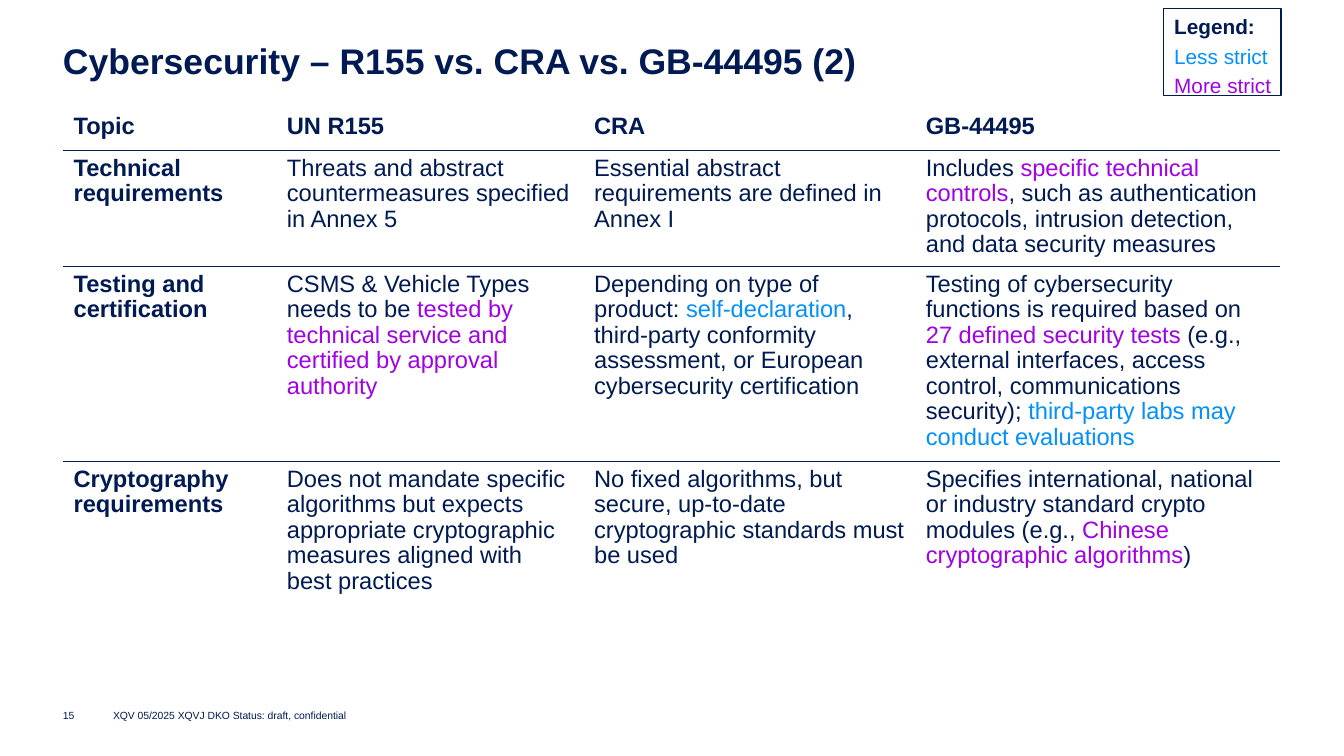
from lxml.etree import SubElement
from pptx import Presentation
from pptx.dml.color import RGBColor
from pptx.enum.shapes import MSO_SHAPE as Shape
from pptx.enum.text import MSO_ANCHOR as Anchor, PP_ALIGN as Align
from pptx.oxml.ns import qn
from pptx.util import Pt

EMU_PER_PX = 9144
FONT = "Arial"
NAVY = RGBColor(0x00, 0x1A, 0x54)
BLUE = RGBColor(0x00, 0x91, 0xFF)
PURPLE = RGBColor(0xA2, 0x00, 0xE6)
WHITE = RGBColor(0xFF, 0xFF, 0xFF)

COLUMN_WIDTHS = [200, 288, 311, 342]
ROW_HEIGHTS = [39, 109, 183, 133]

# A cell is a list of (text, colour) runs.
ROWS = [
    [[("Topic", NAVY)], [("UN R155", NAVY)], [("CRA", NAVY)], [("GB-44495", NAVY)]],
    [
        [("Technical requirements", NAVY)],
        [("Threats and abstract countermeasures specified in Annex 5", NAVY)],
        [("Essential abstract requirements are defined in Annex I", NAVY)],
        [("Includes ", NAVY), ("specific technical controls", PURPLE),
         (", such as authentication protocols, intrusion detection, "
          "and data security measures", NAVY)],
    ],
    [
        [("Testing and certification", NAVY)],
        [("CSMS & Vehicle Types needs to be ", NAVY),
         ("tested by technical service and certified by approval authority", PURPLE)],
        [("Depending on type of product: ", NAVY), ("self-declaration", BLUE),
         (", third-party conformity assessment, or European "
          "cybersecurity certification", NAVY)],
        [("Testing of cybersecurity functions is required based on ", NAVY),
         ("27 defined security tests ", PURPLE),
         ("(e.g., external interfaces, access control, "
          "communications security); ", NAVY),
         ("third-party labs may conduct evaluations", BLUE)],
    ],
    [
        [("Cryptography requirements", NAVY)],
        [("Does not mandate specific algorithms but expects appropriate "
          "cryptographic measures aligned with best practices", NAVY)],
        [("No fixed algorithms, but secure, up-to-date cryptographic "
          "standards must be used", NAVY)],
        [("Specifies international, national or industry standard crypto "
          "modules (e.g., ", NAVY),
         ("Chinese cryptographic algorithms", PURPLE), (")", NAVY)],
    ],
]


def px(length):
    return round(length * EMU_PER_PX)


def add_run(paragraph, text, size, color=NAVY, bold=False):
    run = paragraph.add_run()
    run.text = text
    font = run.font
    font.name, font.size, font.bold = FONT, Pt(size), bold
    font.color.rgb = color


def set_margins(frame, left=0):
    frame.margin_left = px(left)
    frame.margin_top = frame.margin_right = frame.margin_bottom = 0


def set_title(slide, text):
    title = slide.shapes.title
    title.left, title.top, title.width, title.height = map(px, (59, 39, 1142, 40))
    frame = title.text_frame
    set_margins(frame)
    frame.vertical_anchor = Anchor.TOP
    paragraph = frame.paragraphs[0]
    paragraph.alignment = Align.LEFT
    paragraph.line_spacing = 0.97
    add_run(paragraph, text, 24, bold=True)


def set_borders(cell, ruled_sides):
    """Rule the named sides (T, B) and leave the others without a line."""
    properties = cell._tc.get_or_add_tcPr()
    for side in "LRTB":
        line = SubElement(properties, qn(f"a:ln{side}"), w=str(Pt(0.5)))
        if side in ruled_sides:
            fill = SubElement(line, qn("a:solidFill"))
            SubElement(fill, qn("a:srgbClr"), val=str(NAVY))
        else:
            SubElement(line, qn("a:noFill"))


def fill_cell(cell, runs, bold, ruled_sides):
    set_borders(cell, ruled_sides)
    cell.fill.solid()
    cell.fill.fore_color.rgb = WHITE
    paragraph = cell.text_frame.paragraphs[0]
    paragraph.line_spacing = 0.97
    for text, color in runs:
        add_run(paragraph, text, 16, color, bold)


def add_comparison_table(slide):
    frame = slide.shapes.add_table(
        len(ROWS), len(COLUMN_WIDTHS), px(59), px(102),
        px(sum(COLUMN_WIDTHS)), px(sum(ROW_HEIGHTS)))
    table = frame.table
    table.first_row = table.horz_banding = False
    for column, width in zip(table.columns, COLUMN_WIDTHS):
        column.width = px(width)
    for row, height in zip(table.rows, ROW_HEIGHTS):
        row.height = px(height)
    last_row = len(ROWS) - 1
    for r, row in enumerate(ROWS):
        ruled_sides = ("T" if r > 0 else "") + ("B" if r < last_row else "")
        for c, runs in enumerate(row):
            fill_cell(table.cell(r, c), runs, r == 0 or c == 0, ruled_sides)


def add_legend(slide, entries):
    box = slide.shapes.add_shape(
        Shape.RECTANGLE, px(1091), px(8), px(110), px(82))
    box.shadow.inherit = False
    box.fill.background()
    box.line.color.rgb = NAVY
    box.line.width = Pt(0.75)
    frame = box.text_frame
    set_margins(frame, left=10)
    frame.vertical_anchor = Anchor.TOP
    for i, (text, color, bold) in enumerate(entries):
        paragraph = frame.add_paragraph() if i else frame.paragraphs[0]
        paragraph.alignment = Align.LEFT
        paragraph.line_spacing = 1.2
        add_run(paragraph, text, 14, color, bold)


def add_footer_text(slide, left, width, text):
    box = slide.shapes.add_textbox(px(left), px(661), px(width), px(20))
    frame = box.text_frame
    set_margins(frame)
    frame.word_wrap = True
    frame.vertical_anchor = Anchor.MIDDLE
    add_run(frame.paragraphs[0], text, 7)


def main():
    presentation = Presentation()
    presentation.slide_width = px(1260)
    presentation.slide_height = px(709)
    slide = presentation.slides.add_slide(presentation.slide_layouts[5])
    set_title(slide, "Cybersecurity – R155 vs. CRA vs. GB-44495 (2)")
    add_comparison_table(slide)
    add_legend(slide, [
        ("Legend:", NAVY, True),
        ("Less strict", BLUE, False),
        ("More strict", PURPLE, False),
    ])
    add_footer_text(slide, 59, 39, "15")
    add_footer_text(slide, 106, 504, "XQV 05/2025 XQVJ DKO Status: draft, confidential")
    presentation.save("out.pptx")


if __name__ == "__main__":
    main()
